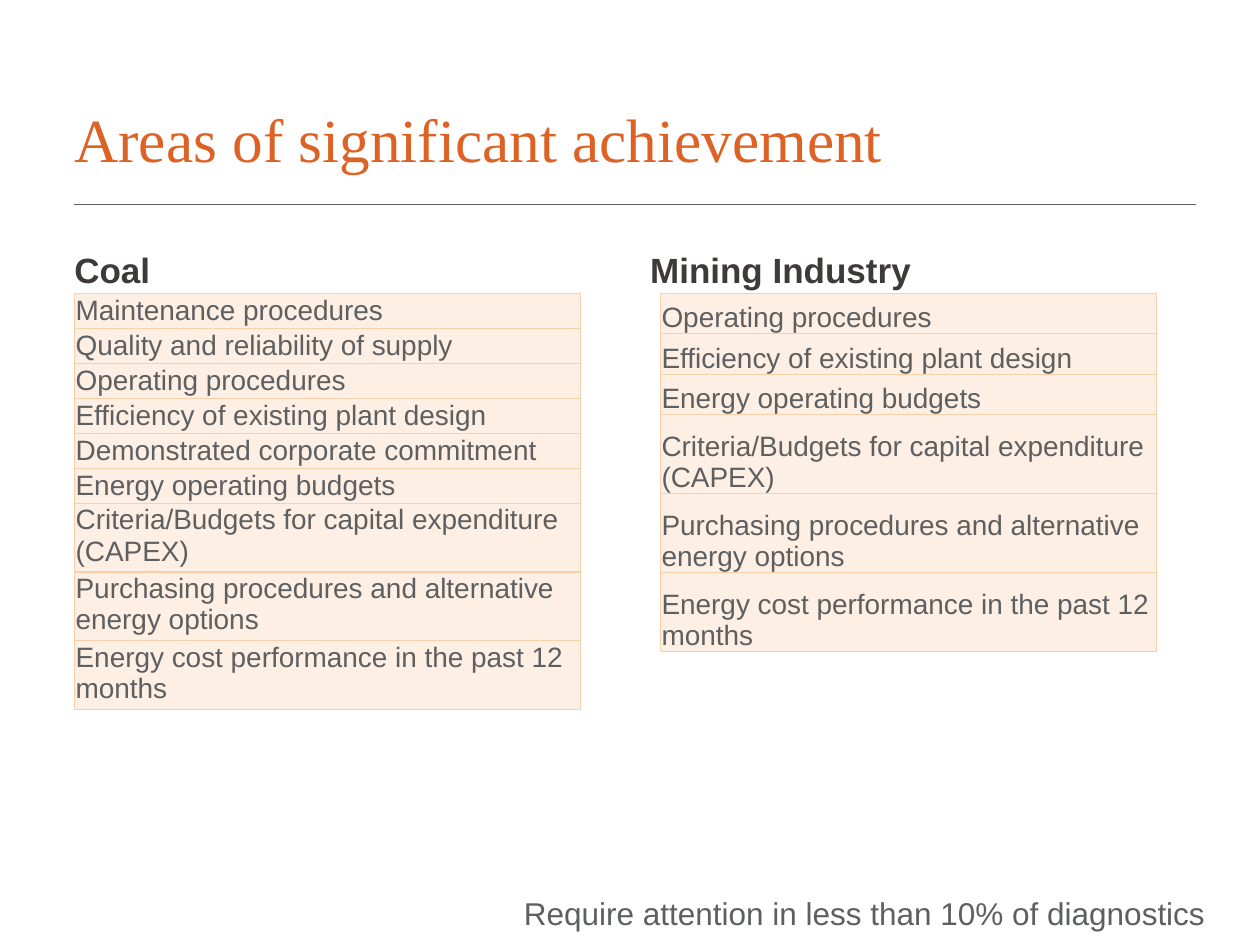
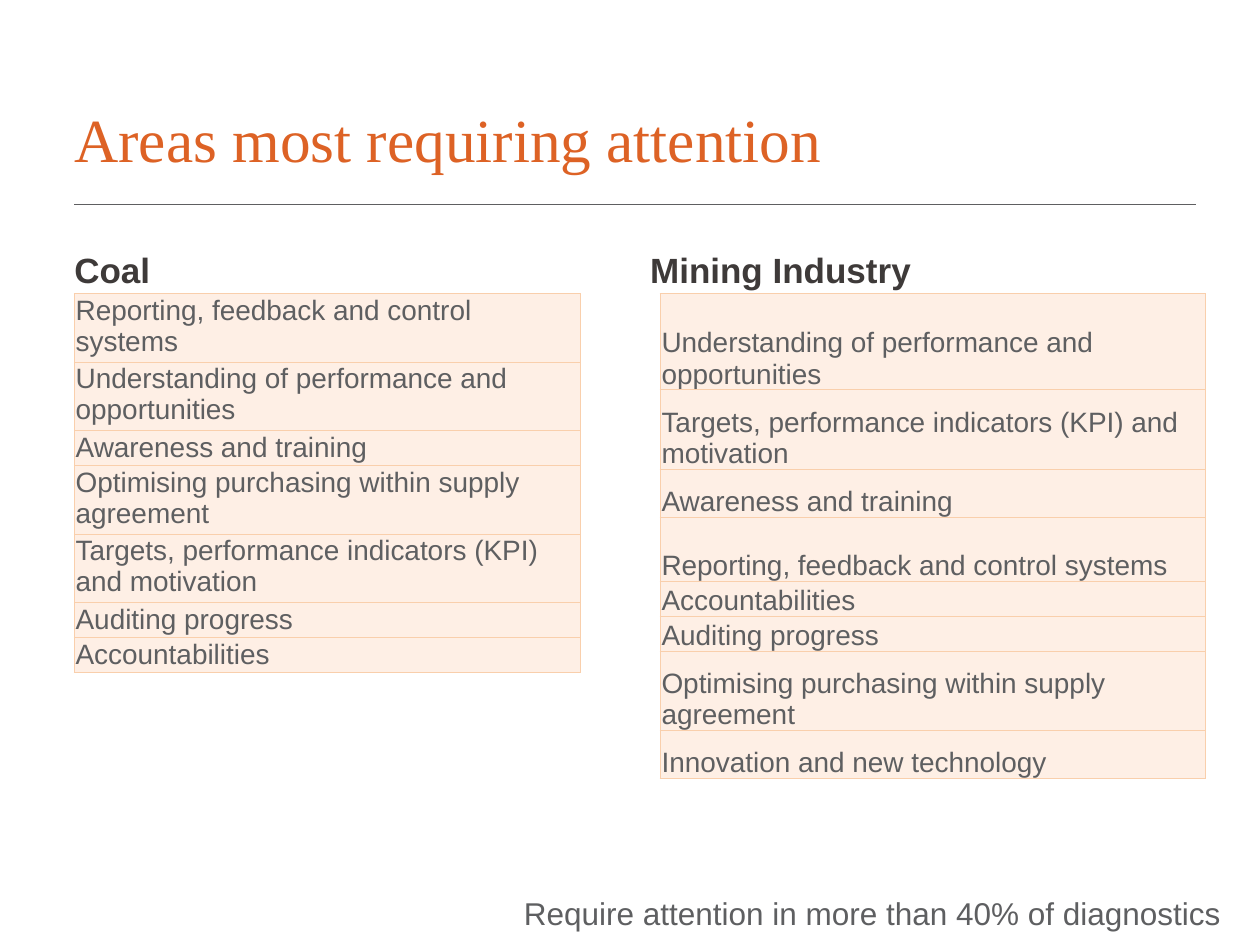
from dataclasses import dataclass

import pptx
import pptx.dml.color
import pptx.enum.shapes
import pptx.enum.text
import pptx.oxml
import pptx.oxml.ns
import pptx.util

Pt = pptx.util.Pt
ANCHOR = pptx.enum.text.MSO_ANCHOR
NS = pptx.oxml.ns.nsdecls("a")


def rgb(value):
    return pptx.dml.color.RGBColor.from_string(value)


# Colours, fonts and type sizes
@dataclass(frozen=True)
class Theme:
    serif: str = "Times New Roman"
    sans: str = "Arial"
    orange: str = "DD6225"
    dark: str = "3E3A39"
    grey: str = "5E5F61"
    white: str = "FFFFFF"
    cell: str = "FEEFE5"
    border: str = "F9CFAC"
    title: float = 35
    heading: float = 20
    footer: float = 18
    body: float = 16
    rule: float = 0.75


# Shared layout
LEFT, RIGHT = 42.5, 683.3
HEADING_LEFTS = (LEFT, 371.5)
HEADING_TOP, HEADING_W, HEADING_H = 139.7, 311.8, 317.5
TABLE_LEFTS = (LEFT, 377.3)
TABLE_TOP = 167.8
COAL_W = 289.4
ONE_LINE, TWO_LINES = 20, 39.2


class Deck:
    """Holds the theme, the presentation and the current slide."""

    def __init__(self, theme):
        self.theme = theme
        self.prs = pptx.Presentation()
        self.prs.slide_width, self.prs.slide_height = Pt(720), Pt(540)
        self.s = None

    def slide(self):
        self.s = self.prs.slides.add_slide(self.prs.slide_layouts[6])

    def set_text(self, tf, text, size, color, font=None, bold=False):
        tf.word_wrap = True
        tf.text = text
        p = tf.paragraphs[0]
        p.alignment = pptx.enum.text.PP_ALIGN.LEFT
        for r in p.runs:
            r.font.name = font or self.theme.sans
            r.font.size = Pt(size)
            r.font.bold = bold
            r.font.color.rgb = rgb(color)
        return p

    def text_box(self, x, y, w, h, top_inset=0):
        tf = self.s.shapes.add_textbox(Pt(x), Pt(y), Pt(w), Pt(h)).text_frame
        tf.margin_left = tf.margin_right = tf.margin_bottom = 0
        tf.margin_top = Pt(top_inset)
        return tf

    def rule(self, y):
        line = self.s.shapes.add_connector(
            pptx.enum.shapes.MSO_CONNECTOR.STRAIGHT, Pt(LEFT), Pt(y), Pt(RIGHT), Pt(y))
        line.line.color.rgb = rgb(self.theme.grey)
        line.line.width = Pt(self.theme.rule)
        line._element.spPr.append(pptx.oxml.parse_xml(f"<a:effectLst {NS}/>"))

    def title(self, text):
        tf = self.text_box(LEFT, 20.9, 516.2, 79.2)
        tf.vertical_anchor = ANCHOR.BOTTOM
        p = self.set_text(tf, text, self.theme.title, self.theme.orange, self.theme.serif)
        p.line_spacing = Pt(32)

    def heading(self, x, text):
        tf = self.text_box(x, HEADING_TOP, HEADING_W, HEADING_H, top_inset=2)
        self.set_text(tf, text, self.theme.heading, self.theme.dark, bold=True)

    def footer(self, text):
        sp = self.s.shapes.add_shape(
            pptx.enum.shapes.MSO_SHAPE.RECTANGLE, Pt(292.3), Pt(507.6), Pt(425.5), Pt(28.8))
        sp.shadow.inherit = False
        sp.fill.solid()
        sp.fill.fore_color.rgb = rgb(self.theme.white)
        sp.line.fill.background()
        sp.text_frame.vertical_anchor = ANCHOR.TOP
        self.set_text(sp.text_frame, text, self.theme.footer, self.theme.grey)

    def border(self, cell):
        tc_pr = cell._tc.get_or_add_tcPr()
        for side in ("lnL", "lnR", "lnT", "lnB"):
            tc_pr.append(pptx.oxml.parse_xml(
                f'<a:{side} {NS} w="{Pt(self.theme.rule)}"><a:solidFill>'
                f'<a:srgbClr val="{self.theme.border}"/></a:solidFill></a:{side}>'))

    def table(self, x, width, rows, anchor):
        total = sum(height for _, height in rows)
        frame = self.s.shapes.add_table(
            len(rows), 1, Pt(x), Pt(TABLE_TOP), Pt(width), Pt(total))
        table = frame.table
        table.first_row = table.horz_banding = False
        for i, (text, height) in enumerate(rows):
            table.rows[i].height = Pt(height)
            cell = table.cell(i, 0)
            cell.margin_left = cell.margin_right = cell.margin_top = Pt(0.75)
            cell.margin_bottom = 0
            cell.vertical_anchor = anchor
            self.border(cell)
            cell.fill.solid()
            cell.fill.fore_color.rgb = rgb(self.theme.cell)
            self.set_text(cell.text_frame, text, self.theme.body, self.theme.grey)

    def comparison(self, title, coal, mining, mining_width, footer):
        self.slide()
        self.rule(116.8)
        self.title(title)
        for x, name in zip(HEADING_LEFTS, ("Coal", "Mining Industry")):
            self.heading(x, name)
        self.footer(footer)
        self.table(TABLE_LEFTS[1], mining_width, mining, ANCHOR.BOTTOM)
        self.table(TABLE_LEFTS[0], COAL_W, coal, ANCHOR.TOP)


# Areas named in more than one table
OPERATING = "Operating procedures"
DESIGN = "Efficiency of existing plant design"
BUDGETS = "Energy operating budgets"
CAPEX = "Criteria/Budgets for capital expenditure (CAPEX)"
PURCHASING = "Purchasing procedures and alternative energy options"
COST = "Energy cost performance in the past 12 months"
REPORTING = "Reporting, feedback and control systems"
UNDERSTANDING = "Understanding of performance and opportunities"
AWARENESS = "Awareness and training"
SUPPLY = "Optimising purchasing within supply agreement"
TARGETS = "Targets, performance indicators (KPI) and motivation"
AUDITING = "Auditing progress"
ACCOUNTABILITIES = "Accountabilities"


def main():
    deck = Deck(Theme())

    # Achievements
    deck.comparison(
        "Areas of significant achievement",
        coal=[("Maintenance procedures", ONE_LINE),
              ("Quality and reliability of supply", ONE_LINE),
              (OPERATING, ONE_LINE),
              (DESIGN, ONE_LINE),
              ("Demonstrated corporate commitment", ONE_LINE),
              (BUDGETS, ONE_LINE),
              (CAPEX, TWO_LINES),
              (PURCHASING, TWO_LINES),
              (COST, TWO_LINES)],
        mining=[(OPERATING, 23), (DESIGN, 23), (BUDGETS, 23),
                (CAPEX, 45.2), (PURCHASING, 45.2), (COST, 45.2)],
        mining_width=283.7,
        footer="Require attention in less than 10% of diagnostics")

    # Areas needing attention
    deck.comparison(
        "Areas most requiring attention",
        coal=[(REPORTING, TWO_LINES),
              (UNDERSTANDING, TWO_LINES),
              (AWARENESS, ONE_LINE),
              (SUPPLY, TWO_LINES),
              (TARGETS, TWO_LINES),
              (AUDITING, ONE_LINE),
              (ACCOUNTABILITIES, ONE_LINE)],
        mining=[(UNDERSTANDING, 55), (TARGETS, 45.4), (AWARENESS, 27.4),
                (REPORTING, 36.7), (ACCOUNTABILITIES, 19.7), (AUDITING, 19.7),
                (SUPPLY, 45.4), ("Innovation and new technology", 27.4)],
        mining_width=311.8,
        footer="Require attention in more than 40% of diagnostics")

    deck.prs.save("out.pptx")


if __name__ == "__main__":
    main()
